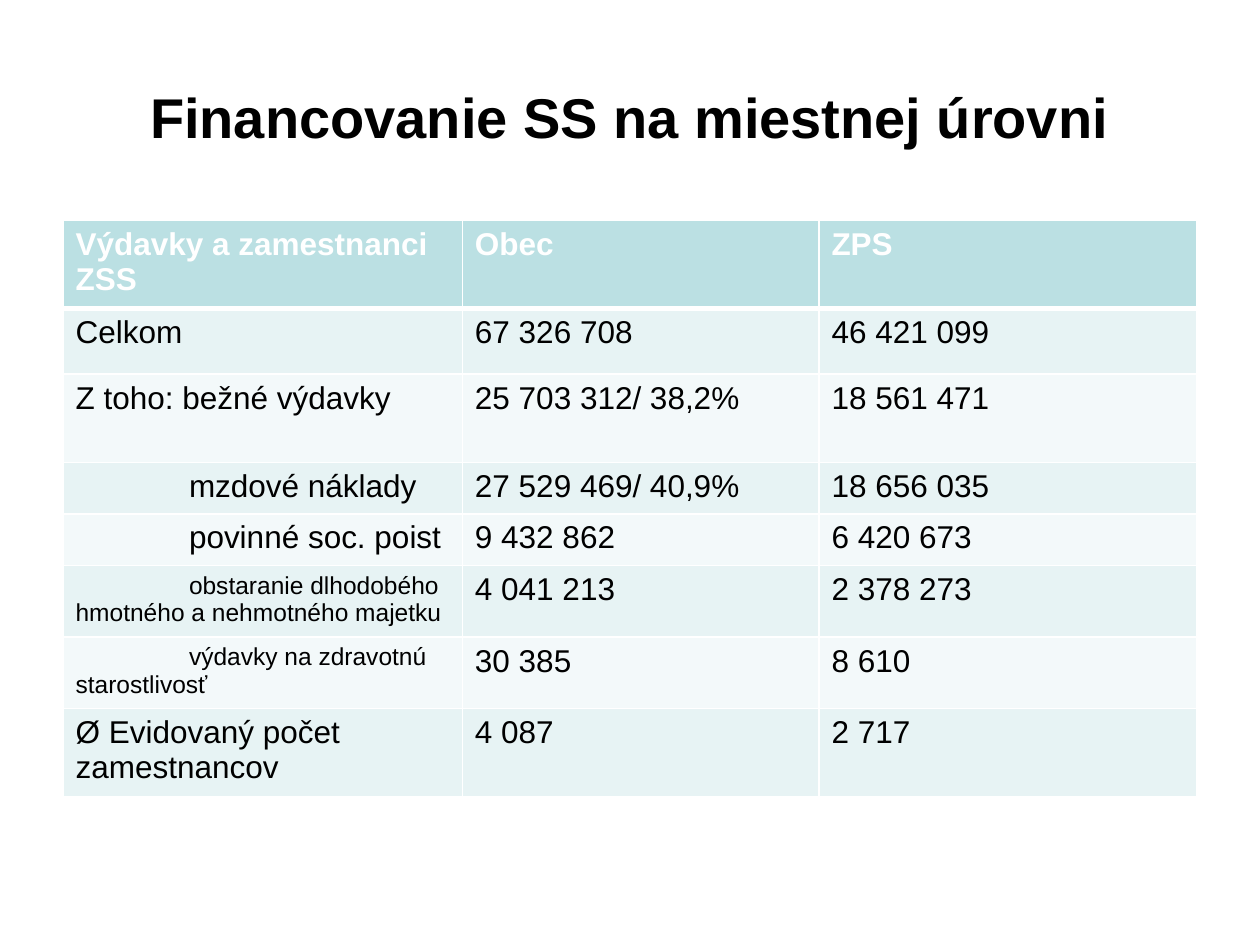
from lxml import etree
from pptx import Presentation, util as u
from pptx.dml.color import RGBColor
from pptx.enum import text
from pptx.oxml.ns import qn

FONT = "Arial"
BLACK, WHITE = "000000", "FFFFFF"
HEADER_FILL = "BBE0E3"
BAND_FILLS = ("E7F3F4", "F3F9FA")
COLUMN_WIDTHS = (3.17, 2.83, 3)
ROW_HEIGHTS = (0.65, 0.52, 0.7, 0.41, 0.41, 0.54, 0.54, 0.65)
SUBITEM_INDENT = 0.9
SUBITEM_ROWS = range(3, 7)
SMALL_ROWS = (5, 6)
EXPENSES = (
    ("Výdavky a zamestnanci ZSS", "Obec", "ZPS"),
    ("Celkom", "67 326 708", "46 421 099"),
    ("Z toho: bežné výdavky", "25 703 312/ 38,2%", "18 561 471"),
    ("mzdové náklady", "27 529 469/ 40,9%", "18 656 035"),
    ("povinné soc. poist", "9 432 862", "6 420 673"),
    ("obstaranie dlhodobého hmotného a nehmotného majetku", "4 041 213", "2 378 273"),
    ("výdavky na zdravotnú starostlivosť", "30 385", "8 610"),
    ("Ø Evidovaný počet zamestnancov", "4 087", "2 717"),
)


def color(value):
    return RGBColor.from_string(value)


def add_span(para, words, size, tint, bold=False):
    span = para.add_run()
    span.text = words
    span.font.name = FONT
    span.font.size = u.Pt(size)
    span.font.bold = bold
    span.font.color.rgb = color(tint)


def add_borders(cell, top, bottom):
    properties = cell._tc.get_or_add_tcPr()
    for side, width in (("L", 1), ("R", 1), ("T", top), ("B", bottom)):
        line = etree.SubElement(properties, qn(f"a:ln{side}"), w=str(u.Pt(width)))
        fill = etree.SubElement(line, qn("a:solidFill"))
        etree.SubElement(fill, qn("a:srgbClr"), val=WHITE)


def add_title(page, left, top, width, height):
    box = page.shapes.add_textbox(*map(u.Inches, (left, top, width, height)))
    frame = box.text_frame
    frame.word_wrap = True
    frame.vertical_anchor = text.MSO_ANCHOR.MIDDLE
    para = frame.paragraphs[0]
    para.alignment = text.PP_ALIGN.CENTER
    add_span(para, "Financovanie SS na miestnej úrovni", 32, BLACK, True)


def fill_cell(cell, words, row, column):
    header = row == 0
    add_borders(cell, 3 if row == 1 else 1, 3 if header else 1)
    cell.fill.solid()
    cell.fill.fore_color.rgb = color(HEADER_FILL if header else BAND_FILLS[(row - 1) % 2])
    para = cell.text_frame.paragraphs[0]
    if column == 0 and row in SUBITEM_ROWS:
        para._p.get_or_add_pPr().set("indent", str(u.Inches(SUBITEM_INDENT)))
    size = 14 if column == 0 and row in SMALL_ROWS else 18
    add_span(para, words, size, WHITE if header else BLACK, header)


def add_expenses(page, left, top, width, height):
    table = page.shapes.add_table(
        len(EXPENSES), len(COLUMN_WIDTHS), *map(u.Inches, (left, top, width, height))
    ).table
    for column, column_width in zip(table.columns, COLUMN_WIDTHS):
        column.width = u.Inches(column_width)
    for row, row_height in zip(table.rows, ROW_HEIGHTS):
        row.height = u.Inches(row_height)
    for row, entries in enumerate(EXPENSES):
        for column, words in enumerate(entries):
            fill_cell(table.cell(row, column), words, row, column)


def main():
    deck = Presentation()
    deck.slide_width, deck.slide_height = u.Inches(10), u.Inches(7.5)
    page = deck.slides.add_slide(deck.slide_layouts[6])
    add_title(page, 0.5, 0.3, 9, 1.25)
    add_expenses(page, 0.5, 1.75, sum(COLUMN_WIDTHS), sum(ROW_HEIGHTS))
    deck.save("out.pptx")


if __name__ == "__main__":
    main()
